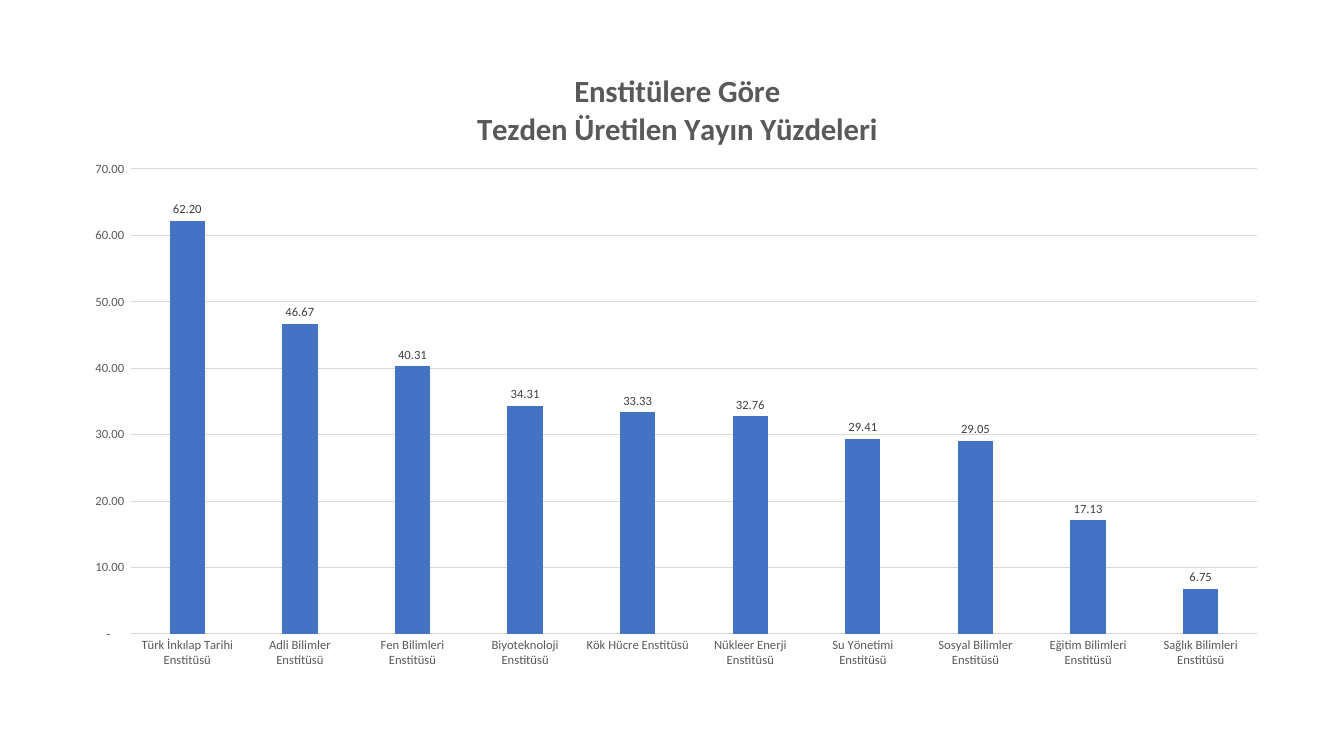
from lxml import etree
from pptx import Presentation
from pptx import util as u
from pptx.chart.data import CategoryChartData
from pptx.dml.color import RGBColor
from pptx.enum import chart as ch, text
from pptx.oxml.ns import qn

EMU_PER_PX = 914400 / 100.8
FONT = "Calibri"
BLUE = RGBColor(0x44, 0x72, 0xC4)
GRID = RGBColor(0xD9, 0xD9, 0xD9)
GREY = RGBColor(0x59, 0x59, 0x59)
DARK = RGBColor(0x40, 0x40, 0x40)
NUMBERS = '_(* #,##0.00_);_(* \\(#,##0.00\\);_(* "-"??_);_(@_)'

TITLE = ["Enstitülere Göre", "Tezden Üretilen Yayın Yüzdeleri"]
RATES = [
    ("Türk İnkılap Tarihi Enstitüsü", 62.20),
    ("Adli Bilimler Enstitüsü", 46.67),
    ("Fen Bilimleri Enstitüsü", 40.31),
    ("Biyoteknoloji Enstitüsü", 34.31),
    ("Kök Hücre Enstitüsü", 33.33),
    ("Nükleer Enerji Enstitüsü", 32.76),
    ("Su Yönetimi Enstitüsü", 29.41),
    ("Sosyal Bilimler Enstitüsü", 29.05),
    ("Eğitim Bilimleri Enstitüsü", 17.13),
    ("Sağlık Bilimleri Enstitüsü", 6.75),
]

# Areas in px: left, top, width, height
CHART_BOX = (69, 45, 1213, 636)
PLOT_BOX = (131, 169, 1126, 465)
TITLE_POS = (474, 68)


def px(n):
    return u.Emu(round(n * EMU_PER_PX))


def style_font(font, size, color, bold=False):
    font.name = FONT
    font.size = u.Pt(size)
    font.bold = bold
    font.color.rgb = color


def style_line(line):
    line.color.rgb = GRID
    line.width = u.Pt(0.75)


def set_layout(parent, index, box, inner=False):
    """Place a chart part by px, as fractions of the chart area."""
    for old in parent.findall(qn("c:layout")):
        parent.remove(old)
    layout = etree.Element(qn("c:layout"))
    manual = etree.SubElement(layout, qn("c:manualLayout"))
    left, top, width, height = CHART_BOX
    fractions = [(box[0] - left) / width, (box[1] - top) / height]
    fractions += [n / full for n, full in zip(box[2:], (width, height))]
    settings = [("layoutTarget", "inner")] if inner else []
    settings += [("xMode", "edge"), ("yMode", "edge")]
    settings += [(k, f"{v:.4f}") for k, v in zip("xywh", fractions)]
    for tag, value in settings:
        etree.SubElement(manual, qn(f"c:{tag}")).set("val", value)
    parent.insert(index, layout)


def add_title(chart):
    chart.has_title = True
    title = chart.chart_title
    title.include_in_layout = False
    tf = title.text_frame
    for i, line in enumerate(TITLE):
        p = tf.add_paragraph() if i else tf.paragraphs[0]
        p.alignment = text.PP_ALIGN.CENTER
        r = p.add_run()
        r.text = line
        style_font(r.font, 22, GREY, bold=True)
    set_layout(tf._txBody.getparent().getparent(), 1, TITLE_POS)


def style_axes(chart):
    for axis in (chart.category_axis, chart.value_axis):
        axis.major_tick_mark = axis.minor_tick_mark = ch.XL_TICK_MARK.NONE
        style_font(axis.tick_labels.font, 9, GREY)
    chart.category_axis.has_major_gridlines = False
    style_line(chart.category_axis.format.line)

    values = chart.value_axis
    values.minimum_scale, values.maximum_scale, values.major_unit = 0, 70, 10
    values.has_major_gridlines = True
    style_line(values.major_gridlines.format.line)
    values.format.line.fill.background()
    values.tick_labels.number_format = NUMBERS
    values.tick_labels.number_format_is_linked = False


def style_columns(plot):
    plot.vary_by_categories = False
    plot.gap_width = 219
    plot.overlap = -27
    series = plot.series[0]
    series.format.fill.solid()
    series.format.fill.fore_color.rgb = BLUE
    labels = series.data_labels
    labels.show_value = True
    labels.position = ch.XL_LABEL_POSITION.OUTSIDE_END
    labels.number_format = NUMBERS
    labels.number_format_is_linked = False
    style_font(labels.font, 9, DARK)


def add_rate_chart(s):
    data = CategoryChartData(number_format="0.00")
    data.categories = [name for name, _ in RATES]
    data.add_series("Yayın Yüzdesi", [rate for _, rate in RATES])
    frame = s.shapes.add_chart(
        ch.XL_CHART_TYPE.COLUMN_CLUSTERED, *map(px, CHART_BOX), data)
    chart = frame.chart
    chart.has_legend = False
    chart.font.name = FONT
    chart.font.size = u.Pt(10)
    add_title(chart)
    style_axes(chart)
    style_columns(chart.plots[0])
    plot_area = chart._chartSpace.chart.plotArea
    set_layout(plot_area, 0, PLOT_BOX, inner=True)


def main():
    prs = Presentation()
    prs.slide_width, prs.slide_height = px(1344), px(756)
    # The heading belongs to the chart, so the slide uses the blank layout
    s = prs.slides.add_slide(prs.slide_layouts[6])
    add_rate_chart(s)
    prs.save("out.pptx")


if __name__ == "__main__":
    main()
